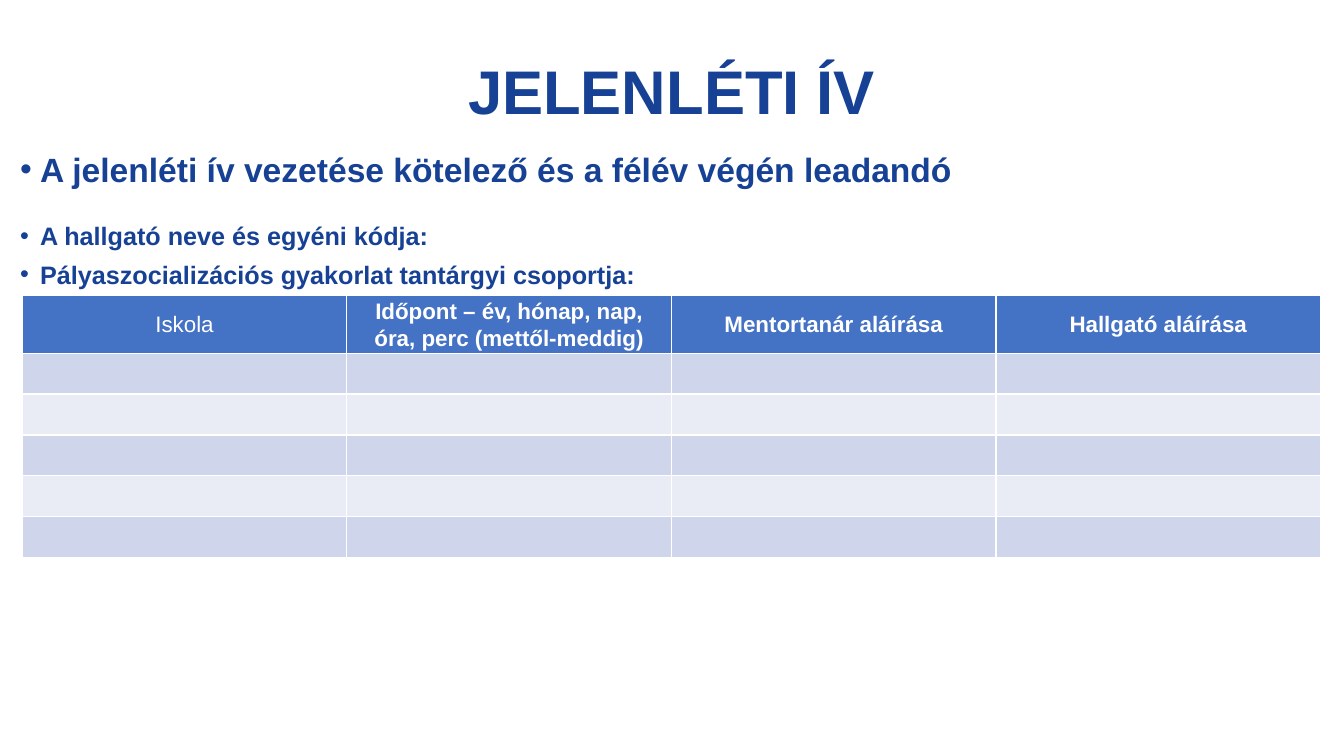
from dataclasses import dataclass

from lxml import etree
from pptx import Presentation
from pptx.dml.color import RGBColor
from pptx.enum.text import MSO_ANCHOR, PP_ALIGN
from pptx.oxml.ns import qn
from pptx.util import Cm, Pt

CENTER = PP_ALIGN.CENTER
MIDDLE = MSO_ANCHOR.MIDDLE


@dataclass(frozen=True)
class Theme:
    """Colours and type sizes of the slide."""
    font: str = "Arial"
    navy: str = "164194"
    header: str = "4472C4"
    bands: tuple = ("CFD5EA", "E9EBF5")
    white: str = "FFFFFF"
    title_size: int = 44
    lead_size: int = 24
    detail_size: int = 18
    header_size: int = 16


THEME = Theme()
HEADINGS = (
    "Iskola",
    "Időpont – év, hónap, nap, óra, perc (mettől-meddig)",
    "Mentortanár aláírása",
    "Hallgató aláírása",
)
EMPTY_ROWS = 5
SLIDE_WIDTH = Cm(33.87)
COLUMN_WIDTH = Cm(8.18)
ROW_HEIGHT = Cm(1.03)


def format_runs(paragraph, size, color, bold=True):
    """Apply the theme font to every run of a paragraph."""
    for run in paragraph.runs:
        run.font.name = THEME.font
        run.font.size = Pt(size)
        run.font.bold = bold
        run.font.color.rgb = RGBColor.from_string(color)


def add_text_frame(slide, top, height):
    """Add a wrapping text box across the slide and return its frame."""
    frame = slide.shapes.add_textbox(0, top, SLIDE_WIDTH, height).text_frame
    frame.word_wrap = True
    return frame


def add_title(slide, text):
    """Add the centred slide title."""
    frame = add_text_frame(slide, Cm(1.14), Cm(2.49))
    frame.margin_left = 0
    frame.vertical_anchor = MIDDLE
    heading = frame.paragraphs[0]
    heading.text = text
    heading.alignment = CENTER
    heading.line_spacing = 0.9
    heading._p.get_or_add_pPr().set("indent", str(Cm(0.25)))
    format_runs(heading, THEME.title_size, THEME.navy)


def add_bullets(slide, items, top, height, size):
    """Add a list of bold bulleted lines."""
    frame = add_text_frame(slide, top, height)
    frame.text = "\n".join(items)
    for item in frame.paragraphs:
        properties = item._p.get_or_add_pPr()
        properties.set("marL", str(Cm(0.76)))
        properties.set("indent", str(-Cm(0.5)))
        etree.SubElement(properties, qn("a:buFont"), typeface=THEME.font)
        etree.SubElement(properties, qn("a:buChar"), char="•")
        item.space_after = Pt(6)
        format_runs(item, size, THEME.navy)


def style_cell(cell, color):
    """Give a cell thin white borders and a solid fill."""
    properties = cell._tc.get_or_add_tcPr()
    for side in ("a:lnL", "a:lnR", "a:lnT", "a:lnB"):
        border = etree.SubElement(properties, qn(side), w=str(Pt(1)))
        paint = etree.SubElement(border, qn("a:solidFill"))
        etree.SubElement(paint, qn("a:srgbClr"), val=THEME.white)
    cell.fill.solid()
    cell.fill.fore_color.rgb = RGBColor.from_string(color)


def fill_heading(cell, text, is_first):
    """Write a column heading; the first one is regular weight."""
    cell.text = text
    cell.vertical_anchor = MIDDLE
    heading = cell.text_frame.paragraphs[0]
    heading.alignment = CENTER
    if not is_first:
        cell.margin_left = cell.margin_right = Cm(0.18)
        cell.margin_top = cell.margin_bottom = 0
        heading.line_spacing = 1.07
    format_runs(heading, THEME.header_size, THEME.white, bold=not is_first)


def add_attendance_table(slide):
    """Add the attendance sheet with its headings and empty banded rows."""
    row_count = EMPTY_ROWS + 1
    attendance = slide.shapes.add_table(
        row_count, len(HEADINGS), Cm(0.56), Cm(7.45),
        COLUMN_WIDTH * len(HEADINGS), ROW_HEIGHT * row_count).table
    for column in attendance.columns:
        column.width = COLUMN_WIDTH
    for index, row in enumerate(attendance.rows):
        row.height = ROW_HEIGHT
        color = THEME.bands[(index - 1) % 2] if index else THEME.header
        for cell in row.cells:
            style_cell(cell, color)
    for index, text in enumerate(HEADINGS):
        fill_heading(attendance.cell(0, index), text, index == 0)


def main():
    """Build and save the attendance slide."""
    deck = Presentation()
    deck.slide_width = SLIDE_WIDTH
    deck.slide_height = Cm(19.05)
    slide = deck.slides.add_slide(deck.slide_layouts[6])
    add_title(slide, "JELENLÉTI ÍV")
    add_bullets(
        slide, ["A jelenléti ív vezetése kötelező és a félév végén leadandó"],
        Cm(3.63), Cm(1.28), THEME.lead_size)
    add_bullets(
        slide, ["A hallgató neve és egyéni kódja:",
                "Pályaszocializációs gyakorlat tantárgyi csoportja:"],
        Cm(5.43), Cm(2.01), THEME.detail_size)
    add_attendance_table(slide)
    deck.save("out.pptx")


if __name__ == "__main__":
    main()
